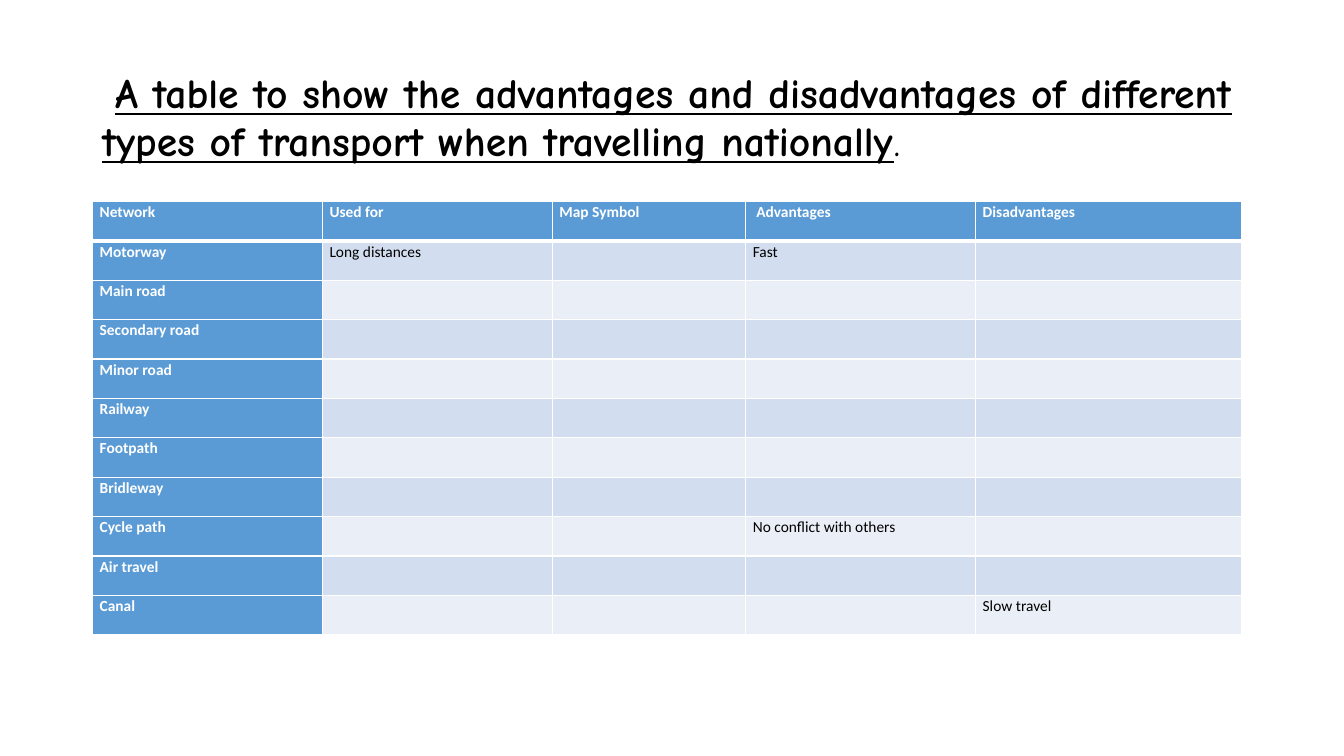
from lxml import etree
from pptx import Presentation
from pptx.dml.color import RGBColor
from pptx.enum import text as t
from pptx.oxml import ns
from pptx.util import Pt

COLUMNS = {"Network": 164.2, "Used for": 164.2, "Map Symbol": 138.2,
           " Advantages": 164.2, "Disadvantages": 190.1}
NETWORKS = {
    "Motorway": ["Long distances", "", "Fast", ""],
    "Main road": [""] * 4,
    "Secondary road": [""] * 4,
    "Minor road": [""] * 4,
    "Railway": [""] * 4,
    "Footpath": [""] * 4,
    "Bridleway": [""] * 4,
    "Cycle path": ["", "", "No conflict with others", ""],
    "Air travel": [""] * 4,
    "Canal": ["", "", "", "Slow travel"],
}


def rgb(value):
    return RGBColor.from_string(value)


class Sheet:
    """Holds the slide and its style."""

    black, white, accent = "000000", "FFFFFF", "5B9BD5"
    bands = "D2DEEF", "EAEFF7"
    body_font, title_font = "Calibri", "Comic Neue"

    def __init__(self, slide):
        self.s = slide

    def run(self, p, words, size, font, color, bold=False, underline=False):
        r = p.add_run()
        r.text = words
        r.font.size, r.font.name = Pt(size), font
        r.font.bold, r.font.underline = bold, underline
        r.font.color.rgb = rgb(color)

    def title(self, left, top, width, height, words):
        sp = self.s.shapes.title
        sp.left, sp.top, sp.width, sp.height = map(Pt, (left, top, width, height))
        tf = sp.text_frame
        tf.word_wrap = True
        tf.auto_size = t.MSO_AUTO_SIZE.NONE
        tf.vertical_anchor = t.MSO_ANCHOR.MIDDLE
        p = tf.paragraphs[0]
        p.alignment = t.PP_ALIGN.LEFT
        p.line_spacing = 0.9
        self.run(p, " ", 39.6, self.body_font, self.black)
        self.run(p, words, 29.7, self.title_font, self.black, True, True)
        self.run(p, ".", 29.7, self.title_font, self.black)

    def border(self, cell, top, bottom):
        """Draws white edges; top and bottom are line widths in points."""
        tc_pr = cell._tc.get_or_add_tcPr()
        edges = {"lnL": 1, "lnR": 1, "lnT": top, "lnB": bottom}
        for i, (tag, width) in enumerate(edges.items()):
            ln = etree.Element(ns.qn("a:" + tag), w=str(Pt(width)))
            fill = etree.SubElement(ln, ns.qn("a:solidFill"))
            etree.SubElement(fill, ns.qn("a:srgbClr"), val=self.white)
            tc_pr.insert(i, ln)

    def cell(self, cell, words, row, heading):
        cell.margin_left = cell.margin_right = Pt(5)
        cell.margin_top = cell.margin_bottom = 0
        cell.fill.solid()
        cell.fill.fore_color.rgb = rgb(
            self.accent if heading else self.bands[(row - 1) % 2])
        self.border(cell, 3 if row == 1 else 1, 3 if row == 0 else 1)
        p = cell.text_frame.paragraphs[0]
        p.line_spacing = 1.07
        if words:
            color = self.white if heading else self.black
            self.run(p, words, 11, self.body_font, color, heading)

    def table(self, left, top, height, widths, rows):
        frame = self.s.shapes.add_table(
            len(rows), len(widths), Pt(left), Pt(top), Pt(sum(widths)), Pt(height))
        table = frame.table
        for column, width in zip(table.columns, widths):
            column.width = Pt(width)
        for i, row in enumerate(rows):
            table.rows[i].height = Pt(height / len(rows))
            for j, words in enumerate(row):
                self.cell(table.cell(i, j), words, i, i == 0 or j == 0)


def main():
    prs = Presentation()
    prs.slide_width, prs.slide_height = Pt(960), Pt(540)
    sheet = Sheet(prs.slides.add_slide(prs.slide_layouts[5]))
    sheet.title(66, 28.8, 828, 104.4,
                "A table to show the advantages and disadvantages of different "
                "types of transport when travelling nationally")
    rows = [list(COLUMNS)] + [[name, *notes] for name, notes in NETWORKS.items()]
    sheet.table(66.2, 144, 309.6, list(COLUMNS.values()), rows)
    prs.save("out.pptx")


if __name__ == "__main__":
    main()
